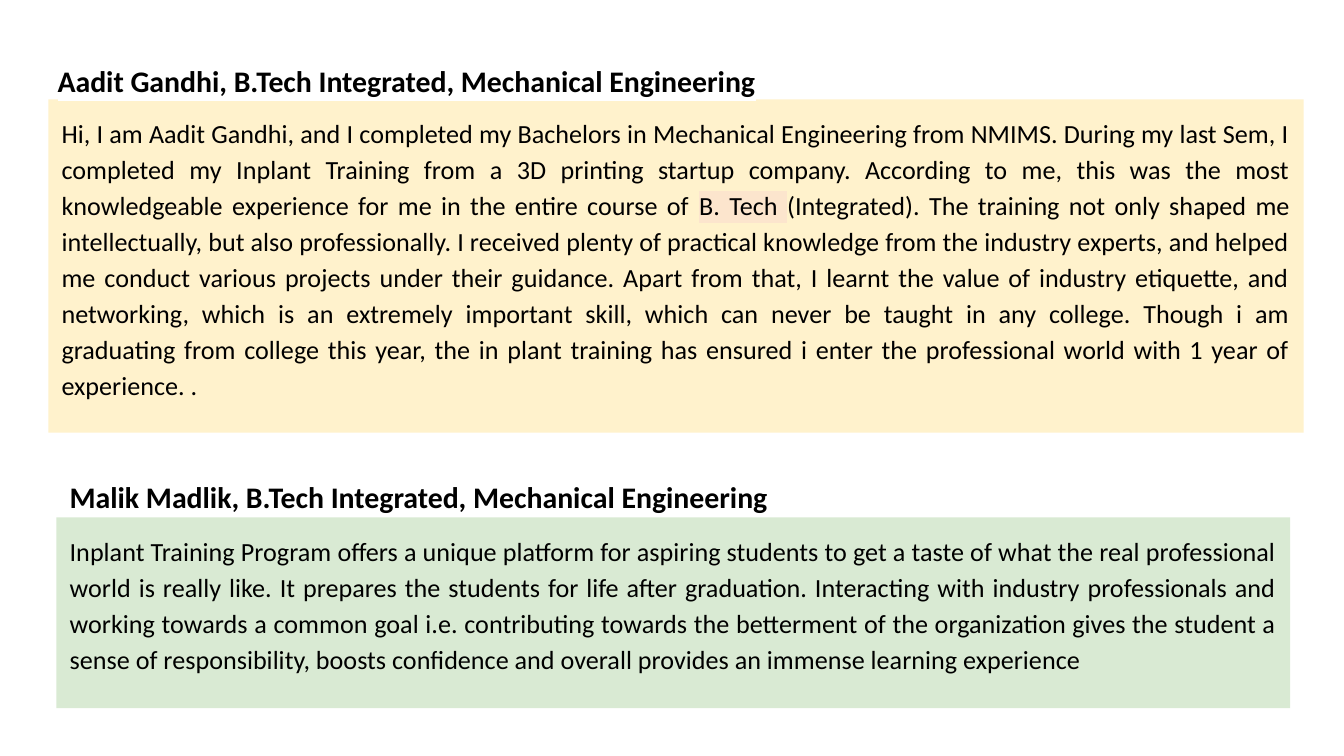
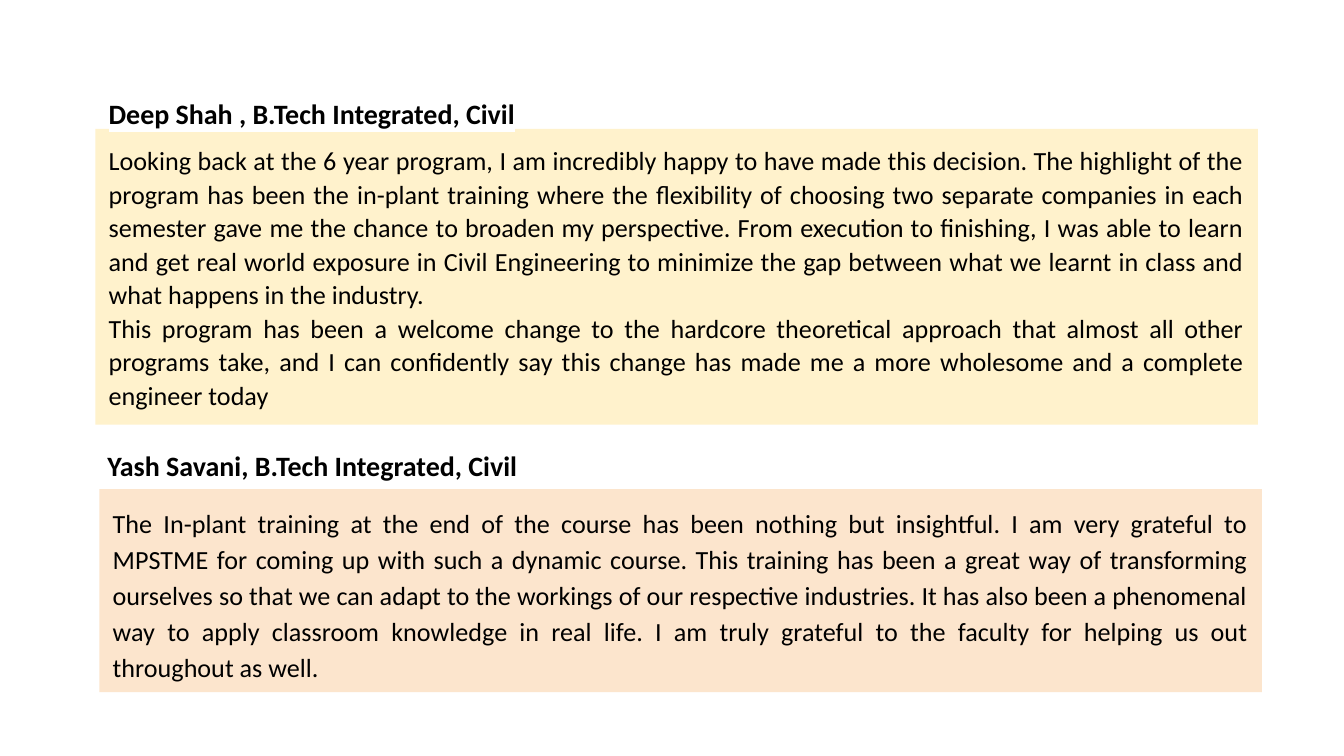
from lxml import etree
from pptx import Presentation
from pptx import util as u
from pptx.dml.color import RGBColor
from pptx.enum import shapes, text
from pptx.oxml import ns

BLACK, WHITE = "000000", "FFFFFF"
CREAM, GREEN, PEACH = "FFF2CC", "D9EAD3", "FCE5CD"
FONT = "Calibri"
BODY_SIZE = 14
INSET = u.Inches(0.1)
SLIDE_WIDTH = u.Inches(10)
SLIDE_HEIGHT = SLIDE_WIDTH * 9 // 16
JUSTIFY, LEFT = text.PP_ALIGN.JUSTIFY, text.PP_ALIGN.LEFT

# A paragraph is a list of (wording, highlight) runs; boxes are left, top, width, height.
SLIDES = [
    {
        "heading_size": 16,
        "heading_align": JUSTIFY,
        "testimonials": [
            {
                "heading": "Aadit Gandhi, B.Tech Integrated, Mechanical Engineering",
                "heading_box": (0.33, 0.33, 5.66, 0.41),
                "box": (0.36, 0.74, 9.34, 2.48),
                "fill": CREAM,
                "spacing": 1.15,
                "paragraphs": [[
                    ("Hi, I am Aadit Gandhi, and I completed my Bachelors in Mechanical "
                     "Engineering from NMIMS. During my last Sem, I completed my Inplant "
                     "Training from a 3D printing startup company. According to me, this "
                     "was the most knowledgeable experience for me in the entire course of ",
                     None),
                    ("B. Tech ", PEACH),
                    ("(Integrated). The training not only shaped me intellectually, but "
                     "also professionally. I received plenty of practical knowledge from "
                     "the industry experts, and helped me conduct various projects under "
                     "their guidance. Apart from that, I learnt the value of industry "
                     "etiquette, and networking, which is an extremely important skill, "
                     "which can never be taught in any college. Though i am graduating "
                     "from college this year, the in plant training has ensured i enter "
                     "the professional world with 1 year of experience. .", None),
                ]],
            },
            {
                "heading": "Malik Madlik, B.Tech Integrated, Mechanical Engineering",
                "heading_box": (0.42, 3.42, 5.51, 0.46),
                "box": (0.42, 3.85, 9.18, 1.42),
                "fill": GREEN,
                "spacing": 1.15,
                "paragraphs": [[
                    ("Inplant Training Program offers a unique platform for aspiring "
                     "students to get a taste of what the real professional world is "
                     "really like. It prepares the students for life after graduation. "
                     "Interacting with industry professionals and working towards a "
                     "common goal i.e. contributing towards the betterment of the "
                     "organization gives the student a sense of responsibility, boosts "
                     "confidence and overall provides an immense learning experience",
                     None),
                ]],
            },
        ],
    },
    {
        "heading_size": 15,
        "heading_align": LEFT,
        "testimonials": [
            {
                "heading": "Deep Shah , B.Tech Integrated, Civil",
                "heading_box": (0.71, 0.58, 3.43, 0.37),
                "box": (0.71, 0.96, 8.65, 2.2),
                "fill": CREAM,
                "spacing": 1.07,
                "paragraphs": [
                    [("Looking back at the 6 year program, I am incredibly happy to have "
                      "made this decision. The highlight of the program has been the "
                      "in-plant training where the flexibility of choosing two separate "
                      "companies in each semester gave me the chance to broaden my "
                      "perspective. From execution to finishing, I was able to learn and "
                      "get real world exposure in Civil Engineering to minimize the gap "
                      "between what we learnt in class and what happens in the industry.",
                      None)],
                    [("This program has been a welcome change to the hardcore theoretical "
                      "approach that almost all other programs take, and I can "
                      "confidently say this change has made me a more wholesome and a "
                      "complete engineer today", None)],
                ],
            },
            {
                "heading": "Yash Savani, B.Tech Integrated, Civil",
                "heading_box": (0.7, 3.2, 3.52, 0.37),
                "box": (0.74, 3.64, 8.65, 1.51),
                "fill": PEACH,
                "spacing": 1.15,
                "paragraphs": [[
                    ("The In-plant training at the end of the course has been nothing but "
                     "insightful. I am very grateful to MPSTME for coming up with such a "
                     "dynamic course. This training has been a great way of transforming "
                     "ourselves so that we can adapt to the workings of our respective "
                     "industries. It has also been a phenomenal way to apply classroom "
                     "knowledge in real life. I am truly grateful to the faculty for "
                     "helping us out throughout as well.", None),
                ]],
            },
        ],
    },
]


def color(value):
    return RGBColor.from_string(value)


def set_format(target, values):
    for name, value in values.items():
        setattr(target, name, value)


def inches(box):
    return [u.Inches(length) for length in box]


def highlight_run(run, value):
    """Add the highlight right after the text fill, where the schema wants it."""
    highlight = etree.Element(ns.qn("a:highlight"))
    etree.SubElement(highlight, ns.qn("a:srgbClr"), val=value)
    run.font.fill._xPr.find(ns.qn("a:solidFill")).addnext(highlight)


def write(shape, paragraphs, size, bold, alignment, spacing):
    frame = shape.text_frame
    set_format(frame, {
        "word_wrap": True, "vertical_anchor": text.MSO_ANCHOR.TOP,
        "margin_left": INSET, "margin_top": INSET,
        "margin_right": INSET, "margin_bottom": INSET,
    })
    for index, runs in enumerate(paragraphs):
        paragraph = frame.add_paragraph() if index else frame.paragraphs[0]
        set_format(paragraph, {"alignment": alignment, "line_spacing": spacing})
        for wording, highlight in runs:
            run = paragraph.add_run()
            run.text = wording
            set_format(run.font, {"name": FONT, "size": u.Pt(size), "bold": bold})
            run.font.color.rgb = color(BLACK)
            if highlight:
                highlight_run(run, highlight)


def add_panel(slide, testimonial):
    panel = slide.shapes.add_shape(
        shapes.MSO_SHAPE.RECTANGLE, *inches(testimonial["box"]))
    panel.shadow.inherit = False
    panel.fill.solid()
    panel.fill.fore_color.rgb = color(testimonial["fill"])
    panel.line.fill.background()
    write(panel, testimonial["paragraphs"], BODY_SIZE, False, JUSTIFY,
          testimonial["spacing"])


def add_heading(slide, testimonial, size, alignment):
    heading = slide.shapes.add_textbox(*inches(testimonial["heading_box"]))
    write(heading, [[(testimonial["heading"], WHITE)]], size, True, alignment, 1.15)


def main():
    presentation = Presentation()
    presentation.slide_width = SLIDE_WIDTH
    presentation.slide_height = SLIDE_HEIGHT
    blank = presentation.slide_layouts[6]
    for content in SLIDES:
        slide = presentation.slides.add_slide(blank)
        for testimonial in content["testimonials"]:
            add_panel(slide, testimonial)
            add_heading(slide, testimonial, content["heading_size"],
                        content["heading_align"])
    presentation.save("out.pptx")


if __name__ == "__main__":
    main()
